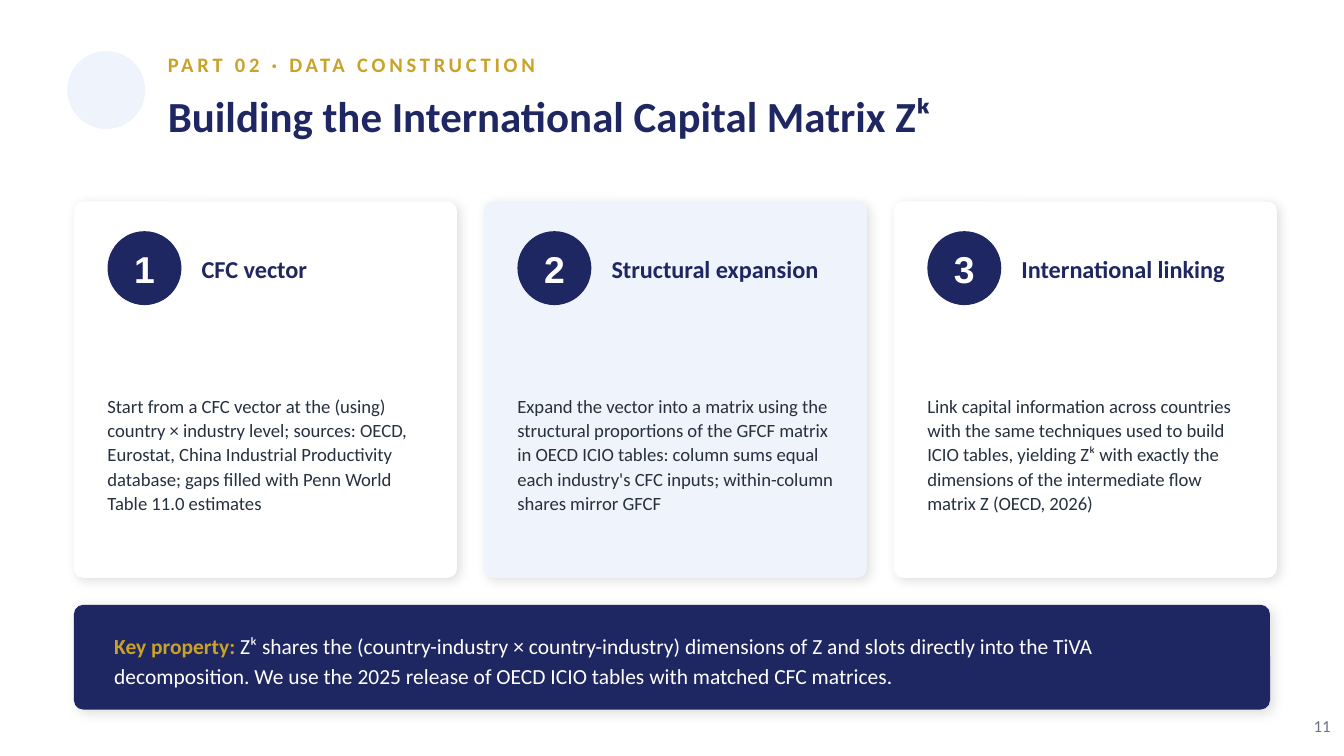
from dataclasses import dataclass

from lxml.etree import SubElement
from pptx import Presentation
from pptx.dml.color import RGBColor
from pptx.enum.shapes import MSO_SHAPE
from pptx.enum.text import MSO_ANCHOR, PP_ALIGN
from pptx.oxml.ns import qn
from pptx.util import Inches, Pt


@dataclass(frozen=True)
class Theme:
    navy: str = "1E2761"
    gold: str = "C9A227"
    pale: str = "EEF3FC"
    white: str = "FFFFFF"
    ink: str = "26303E"
    grey: str = "6B7585"
    shadow: str = "000000"
    body_font: str = "Calibri"
    number_font: str = "Arial"
    title_size: float = 23
    number_size: float = 20
    heading_size: float = 13
    key_size: float = 11.5
    label_size: float = 11
    body_size: float = 10
    page_size: float = 9


class SlideBuilder:
    def __init__(self, page, theme):
        self.page = page
        self.theme = theme

    def shape(self, kind, place, fill, corner=None, shadow=False):
        shape = self.page.shapes.add_shape(kind, *map(Inches, place))
        shape.fill.solid()
        shape.fill.fore_color.rgb = RGBColor.from_string(fill)
        shape.line.fill.background()
        shape.shadow.inherit = False
        if corner is not None:
            shape.adjustments[0] = corner
        if shadow:
            self.soft_shadow(shape)
        return shape

    def soft_shadow(self, shape):
        effects = shape._element.spPr.find(qn("a:effectLst"))
        outer = SubElement(effects, qn("a:outerShdw"), blurRad=str(Pt(6)),
                           dist=str(Pt(2)), dir=str(45 * 60000),
                           algn="bl", rotWithShape="0")
        color = SubElement(outer, qn("a:srgbClr"), val=self.theme.shadow)
        SubElement(color, qn("a:alpha"), val="13000")

    def circle(self, left, top, size, fill):
        return self.shape(MSO_SHAPE.OVAL, (left, top, size, size), fill)

    def panel(self, place, fill, corner):
        return self.shape(MSO_SHAPE.ROUNDED_RECTANGLE, place, fill, corner, shadow=True)

    def text(self, place, spans, size, align=PP_ALIGN.LEFT, leading=None,
             font=None, tracking=None):
        """Add a text box; spans is a list of (words, color, bold)."""
        box = self.page.shapes.add_textbox(*map(Inches, place))
        frame_format = {
            "word_wrap": True, "vertical_anchor": MSO_ANCHOR.MIDDLE,
            "margin_left": 0, "margin_right": 0, "margin_top": 0, "margin_bottom": 0,
        }
        for name, value in frame_format.items():
            setattr(box.text_frame, name, value)
        para = box.text_frame.paragraphs[0]
        para.alignment = align
        if leading:
            para.line_spacing = Pt(leading)
        for words, color, bold in spans:
            span = para.add_run()
            span.text = words
            span_format = {"name": font or self.theme.body_font,
                           "size": Pt(size), "bold": bold}
            for name, value in span_format.items():
                setattr(span.font, name, value)
            span.font.color.rgb = RGBColor.from_string(color)
            if tracking:
                span._r.get_or_add_rPr().set("spc", str(tracking * 100))
        return box

    def step_card(self, left, number, heading, body, fill):
        theme = self.theme
        inner = left + 0.25
        badge = 0.55
        self.panel((left, 1.5, 2.85, 2.8), fill, 0.025)
        self.circle(inner, 1.72, badge, theme.navy)
        self.text((inner, 1.72, badge, badge), [(str(number), theme.white, True)],
                  theme.number_size, PP_ALIGN.CENTER, font=theme.number_font)
        self.text((left + 0.95, 1.8, 1.85, 0.4), [(heading, theme.navy, True)],
                  theme.heading_size)
        self.text((inner, 2.5, 2.4, 1.75), [(body, theme.ink, False)],
                  theme.body_size, leading=13)


STEPS = [
    ("CFC vector",
     "Start from a CFC vector at the (using) country × industry level; sources: "
     "OECD, Eurostat, China Industrial Productivity database; gaps filled with "
     "Penn World Table 11.0 estimates"),
    ("Structural expansion",
     "Expand the vector into a matrix using the structural proportions of the GFCF "
     "matrix in OECD ICIO tables: column sums equal each industry's CFC inputs; "
     "within-column shares mirror GFCF"),
    ("International linking",
     "Link capital information across countries with the same techniques used to "
     "build ICIO tables, yielding Zᵏ with exactly the dimensions of the "
     "intermediate flow matrix Z (OECD, 2026)"),
]


def main():
    theme = Theme()
    deck = Presentation()
    # Widescreen page, 16:9
    deck.slide_width = Inches(10)
    deck.slide_height = Inches(10 * 9 / 16)
    builder = SlideBuilder(deck.slides.add_slide(deck.slide_layouts[6]), theme)

    # Page number
    builder.text((9.45, 5.25, 0.45, 0.3), [("11", theme.grey, False)],
                 theme.page_size, PP_ALIGN.RIGHT)

    # Header
    builder.circle(0.5, 0.38, 0.58, theme.pale)
    builder.text((1.25, 0.34, 8, 0.28), [("PART 02 · DATA CONSTRUCTION", theme.gold, True)],
                 theme.label_size, tracking=2)
    builder.text((1.25, 0.58, 8.3, 0.55),
                 [("Building the International Capital Matrix Zᵏ", theme.navy, True)],
                 theme.title_size)

    # Step cards, the middle one tinted
    for index, (heading, body) in enumerate(STEPS):
        fill = theme.pale if index == 1 else theme.white
        builder.step_card(0.55 + index * 3.05, index + 1, heading, body, fill)

    # Key property banner
    builder.panel((0.55, 4.5, 8.9, 0.78), theme.navy, 0.09)
    builder.text((0.85, 4.6, 8.3, 0.6), [
        ("Key property: ", theme.gold, True),
        ("Zᵏ shares the (country-industry × country-industry) dimensions of Z and "
         "slots directly into the TiVA decomposition. We use the 2025 release of "
         "OECD ICIO tables with matched CFC matrices.", theme.white, False),
    ], theme.key_size, leading=16)

    deck.save("out.pptx")


if __name__ == "__main__":
    main()
